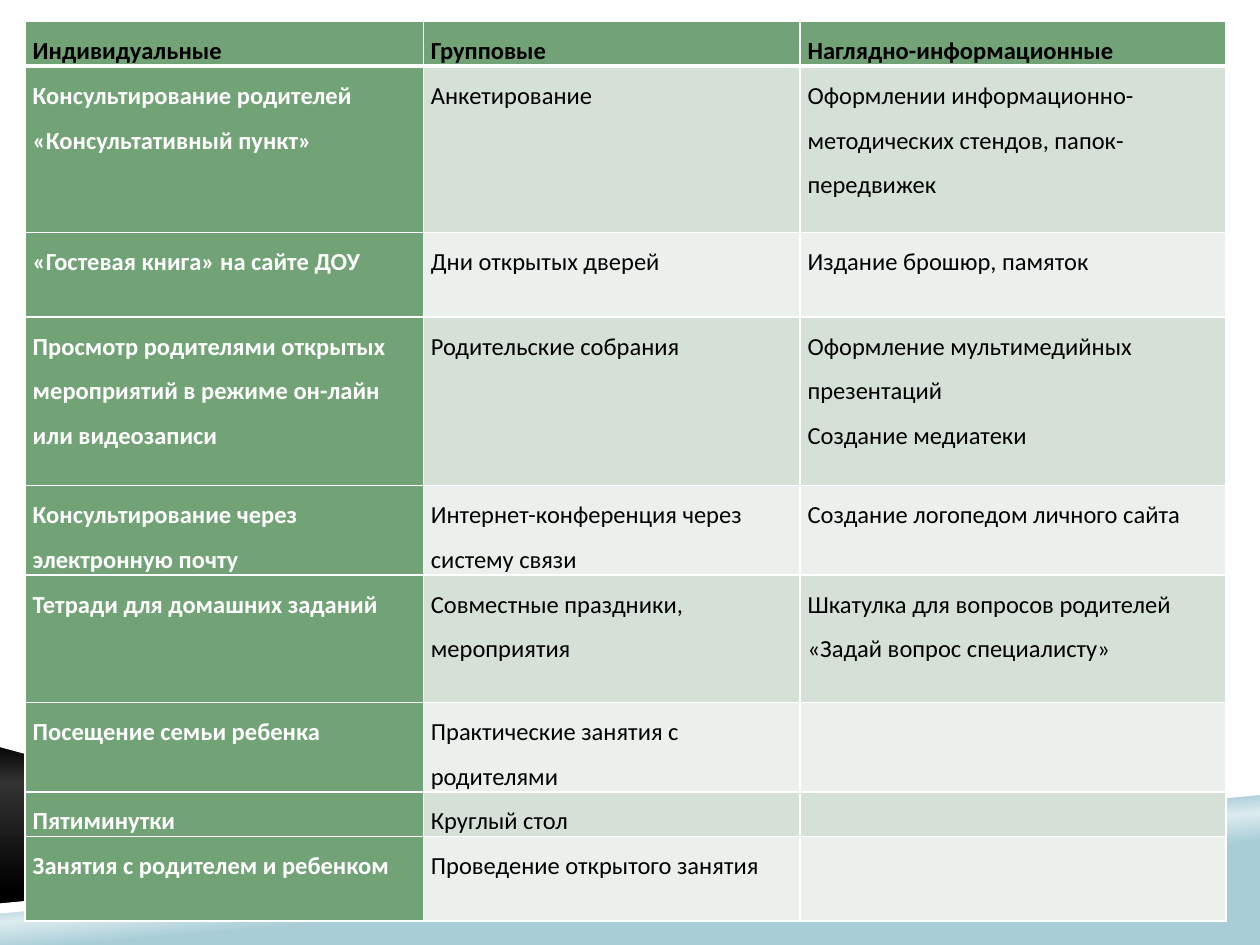
from dataclasses import dataclass

from lxml.etree import SubElement
from pptx import Presentation
from pptx.dml.color import RGBColor as Rgb
from pptx.enum.text import PP_ALIGN as Align
from pptx.oxml.ns import qn
from pptx.util import Inches, Pt


@dataclass(frozen=True)
class Theme:
    font: str = "Calibri"
    size: int = 14
    black: str = "000000"
    white: str = "FFFFFF"
    green: str = "72A376"
    bands: tuple = ("D5E0D6", "EBF0EC")
    sea: tuple = ((39, "A8CDD7"), (50, "DCEBEF"), (58, "A8CDD7"))
    night: tuple = ((0, "000000"), (24, "333333"), (90, "000000"))


THEME = Theme()
COLS = (3.16, 2.99, 3.38)
HEIGHTS = (0.34, 1.32, 0.67, 1.34, 0.71, 1.01, 0.67, 0.35, 0.67)
ROWS = (
    ("Индивидуальные", "Групповые", "Наглядно-информационные"),
    ("Консультирование родителей\n«Консультативный пункт»", "Анкетирование",
     "Оформлении информационно-методических стендов, папок-передвижек"),
    ("«Гостевая книга» на сайте ДОУ", "Дни открытых дверей",
     "Издание брошюр, памяток"),
    ("Просмотр родителями открытых мероприятий в режиме он-лайн или видеозаписи",
     "Родительские собрания",
     "Оформление мультимедийных презентаций\nСоздание медиатеки"),
    ("Консультирование через электронную почту",
     "Интернет-конференция через систему связи",
     "Создание логопедом личного сайта"),
    ("Тетради для домашних заданий", "Совместные праздники, мероприятия",
     "Шкатулка для вопросов родителей «Задай вопрос специалисту»"),
    ("Посещение семьи ребенка", "Практические занятия с родителями", ""),
    ("Пятиминутки", "Круглый стол", ""),
    ("Занятия с родителем и ребенком", "Проведение открытого занятия", ""),
)
JUST_ROW = 7


def add_wave(slide, points):
    spots = [(Inches(x), Inches(y)) for x, y in points]
    pen = slide.shapes.build_freeform(*spots[0], scale=1.0)
    pen.add_line_segments(spots[1:], close=True)
    wave = pen.convert_to_shape()
    wave.shadow.inherit = False
    wave.line.fill.background()
    return wave


def fill_flat(item, color):
    item.fill.solid()
    item.fill.fore_color.rgb = Rgb.from_string(color)


def fill_blend(shape, stops, angle):
    shape.fill.gradient()
    shape.fill.gradient_angle = 360 - angle
    group = next(shape._element.spPr.iter(qn("a:gsLst")))
    for stop in list(group):
        group.remove(stop)
    for spot, color in stops:
        stop = SubElement(group, qn("a:gs"), pos=str(spot * 1000))
        SubElement(stop, qn("a:srgbClr"), val=color)


def set_edge(cell, side, width):
    edge = SubElement(cell._tc.get_or_add_tcPr(), qn(f"a:ln{side}"),
                      w=str(Pt(width)))
    paint = SubElement(edge, qn("a:solidFill"))
    SubElement(paint, qn("a:srgbClr"), val=THEME.white)


def style_text(cell, bold, color, just):
    for para in cell.text_frame.paragraphs:
        para.line_spacing = 1.5
        if just:
            para.alignment = Align.JUSTIFY
        for run in para.runs:
            look = {"name": THEME.font, "size": Pt(THEME.size), "bold": bold}
            for key, value in look.items():
                setattr(run.font, key, value)
            run.font.color.rgb = Rgb.from_string(color)


def style_cell(cell, row, col):
    head, side = row == 0, col == 0
    pads = {"margin_left": 0.06, "margin_right": 0.06,
            "margin_top": 0, "margin_bottom": 0}
    for key, value in pads.items():
        setattr(cell, key, Inches(value))
    for edge in "LRTB":
        thick = (head and edge == "B") or (row == 1 and edge == "T")
        set_edge(cell, edge, 3 if thick else 1)
    fill_flat(cell, THEME.green if head or side else THEME.bands[(row - 1) % 2])
    color = THEME.white if side and not head else THEME.black
    style_text(cell, head or side, color, row == JUST_ROW)


def add_grid(slide):
    frame = slide.shapes.add_table(
        len(ROWS), len(COLS), Inches(0.2), Inches(0.17),
        Inches(sum(COLS)), Inches(sum(HEIGHTS)))
    grid = frame.table
    for col, width in zip(grid.columns, COLS):
        col.width = Inches(width)
    for row, height in zip(grid.rows, HEIGHTS):
        row.height = Inches(height)
    for row, texts in enumerate(ROWS):
        for col, text in enumerate(texts):
            cell = grid.cell(row, col)
            cell.text = text
            style_cell(cell, row, col)


def add_waves(slide):
    sea = add_wave(slide, [(0, 7.21), (10, 6.27), (10, 7.5), (0, 7.5)])
    fill_blend(sea, THEME.sea, 265)
    night = add_wave(slide, [(0, 5.89), (3.59, 6.85), (0, 7.21)])
    fill_blend(night, THEME.night, 90)
    for points in (
        [(10, 6.23), (0, 7.17), (0, 7.25), (10, 6.31)],
        [(0, 5.85), (0, 5.93), (3.5, 6.88), (3.75, 6.86)],
    ):
        fill_flat(add_wave(slide, points), THEME.white)


def main():
    deck = Presentation()
    deck.slide_width, deck.slide_height = Inches(10), Inches(7.5)
    slide = deck.slides.add_slide(deck.slide_layouts[6])
    fill_flat(slide.background, THEME.white)
    add_waves(slide)
    add_grid(slide)
    deck.save("out.pptx")


if __name__ == "__main__":
    main()
